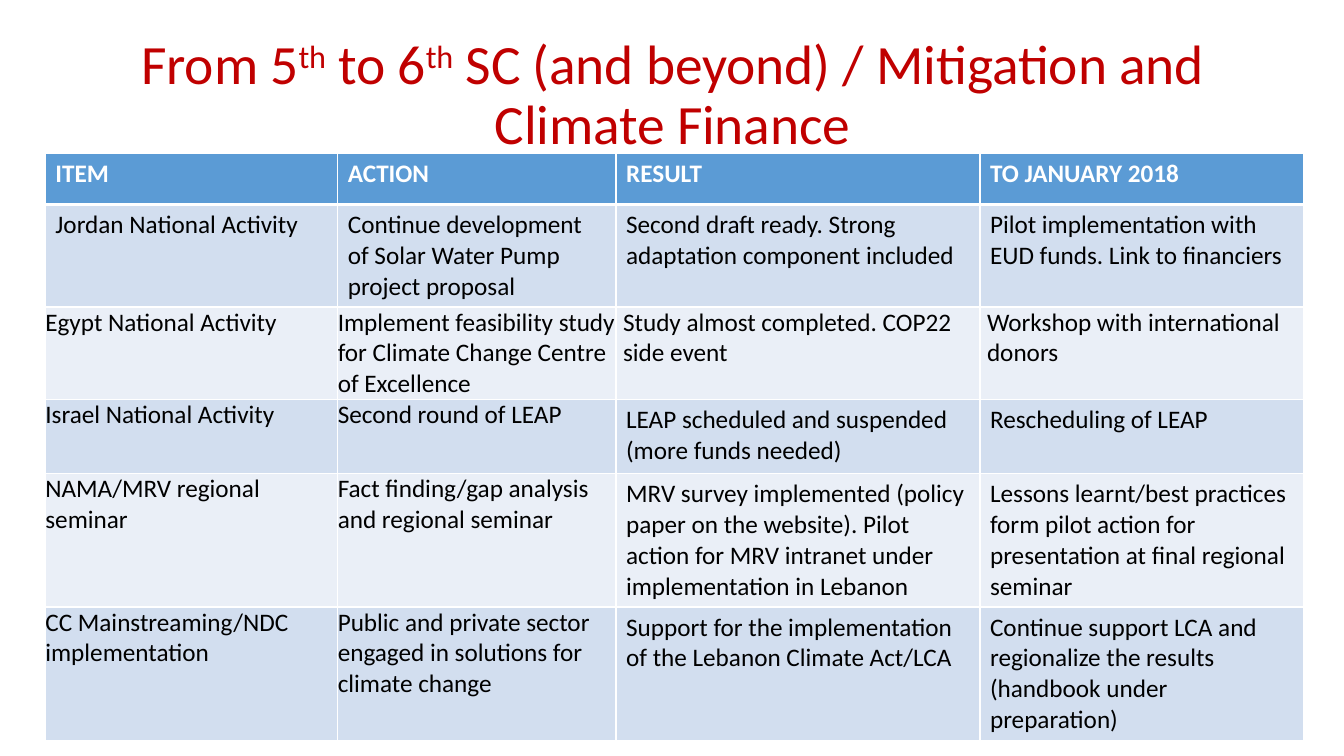
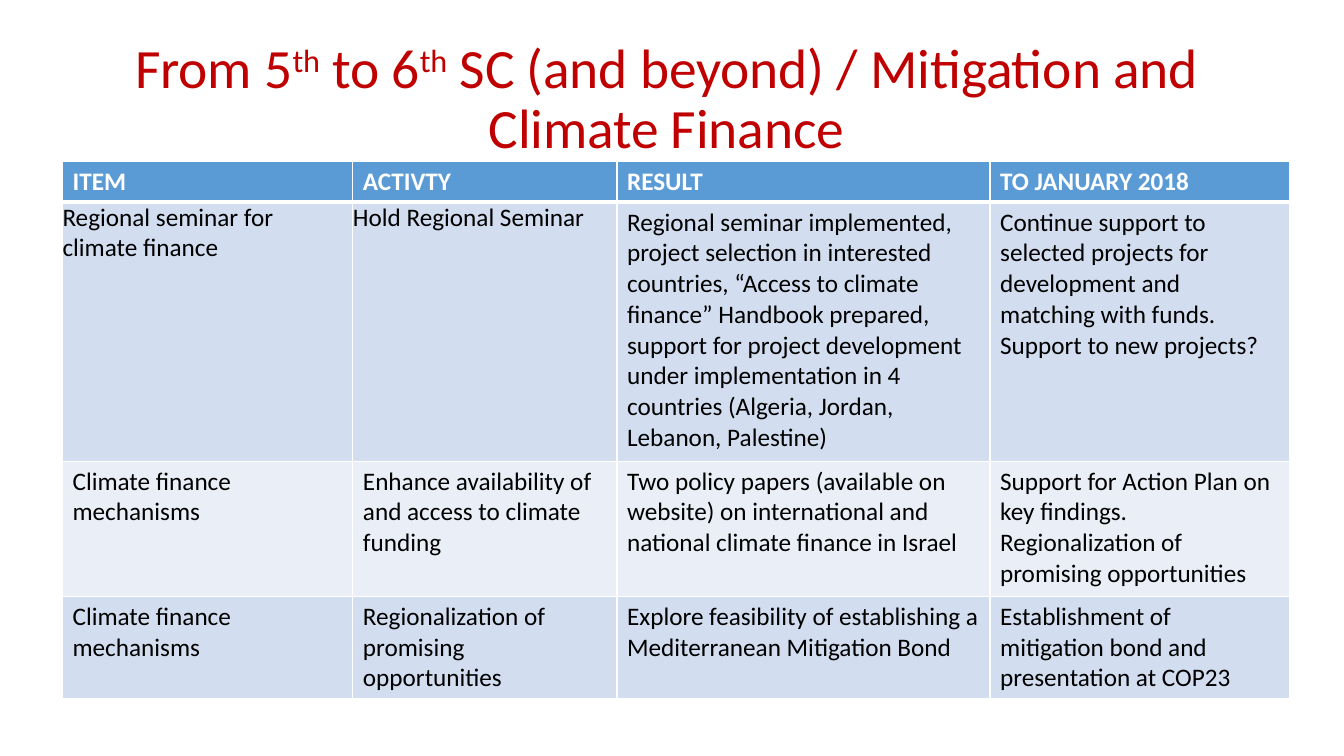
from pptx import Presentation
from pptx.dml.color import RGBColor
from pptx.enum.text import MSO_ANCHOR, MSO_AUTO_SIZE, PP_ALIGN
from pptx.oxml.ns import qn
from pptx.util import Inches, Pt
from lxml.etree import SubElement

TITLE_RUNS = [
    ("From 5", False), ("th", True), (" to 6", False), ("th", True),
    (" SC (and beyond) / Mitigation and Climate Finance", False),
]

ACTIVITIES = [
    ["ITEM", "ACTION", "RESULT", "TO JANUARY 2018"],
    ["Jordan National Activity",
     "Continue development of Solar Water Pump project proposal",
     "Second draft ready. Strong adaptation component included",
     "Pilot implementation with EUD funds. Link to financiers"],
    ["Egypt National Activity",
     "Implement feasibility study for Climate Change Centre of Excellence",
     "Study almost completed. COP22 side event",
     "Workshop with international donors"],
    ["Israel National Activity",
     "Second round of LEAP",
     "LEAP scheduled and suspended (more funds needed)",
     "Rescheduling of LEAP"],
    ["NAMA/MRV regional seminar",
     "Fact finding/gap analysis and regional seminar",
     "MRV survey implemented (policy paper on the website). Pilot action "
     "for MRV intranet under implementation in Lebanon",
     "Lessons learnt/best practices form pilot action for presentation at "
     "final regional seminar"],
    ["CC Mainstreaming/NDC implementation",
     "Public and private sector engaged in solutions for climate change",
     "Support for the implementation of the Lebanon Climate Act/LCA",
     "Continue support LCA and regionalize the results (handbook under "
     "preparation)"],
]

FINANCE = [
    ["ITEM", "ACTIVTY", "RESULT", "TO JANUARY 2018"],
    ["Regional seminar for climate finance",
     "Hold Regional Seminar",
     "Regional seminar implemented, project selection in interested "
     "countries, “Access to climate finance” Handbook prepared, support for "
     "project development under implementation in 4 countries (Algeria, "
     "Jordan, Lebanon, Palestine)",
     "Continue support to selected projects for development and matching "
     "with funds. Support to new projects?"],
    ["Climate finance mechanisms",
     "Enhance availability of and access to climate funding",
     "Two policy papers (available on website) on international and "
     "national climate finance in Israel",
     "Support for Action Plan on key findings. Regionalization of promising "
     "opportunities"],
    ["Climate finance mechanisms",
     "Regionalization of promising opportunities",
     "Explore feasibility of establishing a Mediterranean Mitigation Bond",
     "Establishment of mitigation bond and presentation at COP23"],
]


def color(value):
    return RGBColor.from_string(value)


class Deck:
    FONT = "Calibri"
    RED = "C00000"
    WHITE = "FFFFFF"
    BLACK = "000000"
    HEADER = "5B9BD5"
    BANDS = ("EAEFF7", "D2DEEF")

    def __init__(self):
        self.presentation = Presentation()
        self.presentation.slide_width = Inches(13.33)
        self.presentation.slide_height = Inches(7.5)
        self.slide = None

    def add_slide(self):
        layout = self.presentation.slide_layouts.get_by_name("Title Only")
        self.slide = self.presentation.slides.add_slide(layout)

    def style(self, paragraph, size, font_color, bold=False):
        font = paragraph.font
        font.name, font.size, font.bold = self.FONT, Pt(size), bold
        font.color.rgb = color(font_color)

    def title(self, left, top, width, height):
        shape = self.slide.shapes.title
        shape.left, shape.top = Inches(left), Inches(top)
        shape.width, shape.height = Inches(width), Inches(height)
        frame = shape.text_frame
        frame.word_wrap = True
        frame.auto_size = MSO_AUTO_SIZE.NONE
        frame.vertical_anchor = MSO_ANCHOR.MIDDLE
        paragraph = frame.paragraphs[0]
        paragraph.alignment = PP_ALIGN.CENTER
        paragraph.line_spacing = 0.9
        for text, raised in TITLE_RUNS:
            run = paragraph.add_run()
            run.text = text
            properties = run._r.get_or_add_rPr()
            properties.set("spc", "-10")
            if raised:
                properties.set("baseline", "30000")
        self.style(paragraph, 39.6, self.RED)

    def borders(self, cell, top, bottom):
        properties = cell._tc.get_or_add_tcPr()
        for side, width in (("L", 1), ("R", 1), ("T", top), ("B", bottom)):
            line = SubElement(properties, qn(f"a:ln{side}"), w=str(Pt(width)))
            fill = SubElement(line, qn("a:solidFill"))
            SubElement(fill, qn("a:srgbClr"), val=self.WHITE)

    def cell(self, cell, text, row, inset):
        is_header = row == 0
        self.borders(cell, 3 if row == 1 else 1, 3 if is_header else 1)
        cell.fill.solid()
        cell.fill.fore_color.rgb = color(
            self.HEADER if is_header else self.BANDS[row % 2])
        if inset is not None:
            cell.margin_left = Inches(inset)
            cell.margin_right = cell.margin_top = cell.margin_bottom = 0
        cell.text = text
        self.style(cell.text_frame.paragraphs[0], 18,
                   self.WHITE if is_header else self.BLACK, is_header)

    def table(self, left, top, widths, heights, rows, insets):
        table = self.slide.shapes.add_table(
            len(rows), len(widths), Inches(left), Inches(top),
            Inches(sum(widths)), Inches(sum(heights))).table
        table.first_row = table.horz_banding = False
        for column, width in zip(table.columns, widths):
            column.width = Inches(width)
        for row, (height, texts) in enumerate(zip(heights, rows)):
            table.rows[row].height = Inches(height)
            for column, text in enumerate(texts):
                self.cell(table.cell(row, column), text, row,
                          insets.get((row, column)))


def main():
    deck = Deck()

    deck.add_slide()
    deck.title(0.92, 0.4, 11.5, 1.12)
    flush = {(row, column): 0 for row in range(2, 6) for column in range(2)}
    deck.table(0.45, 1.52, [2.9, 2.76, 3.61, 3.21],
               [0.51, 1.01, 0.91, 0.74, 1.32, 1.32], ACTIVITIES,
               {**flush, (2, 2): 0.07, (2, 3): 0.07})

    deck.add_slide()
    deck.title(0.8, 0.4, 11.62, 1.2)
    deck.table(0.62, 1.6, [2.88, 2.62, 3.7, 2.97],
               [0.4, 2.57, 1.34, 1.01], FINANCE, {(1, 0): 0, (1, 1): 0})

    deck.presentation.save("out.pptx")


if __name__ == "__main__":
    main()
